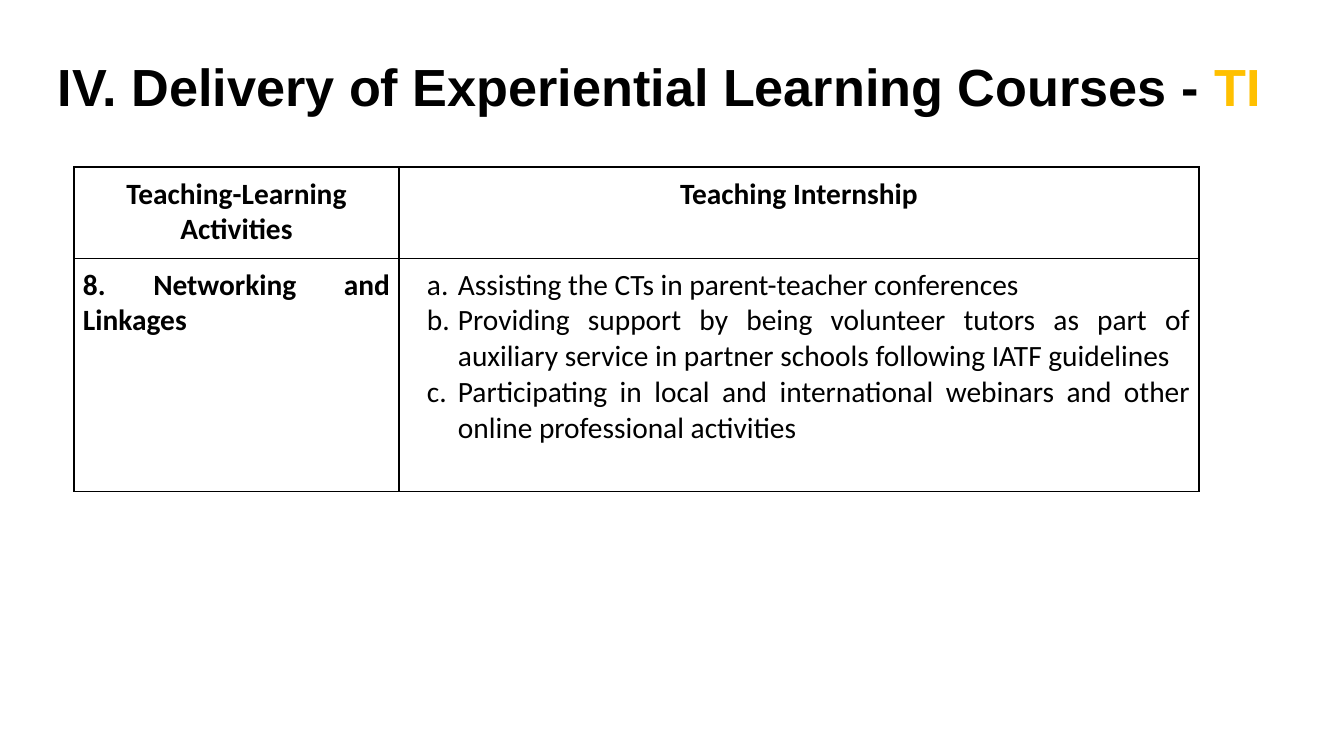
from lxml import etree
from pptx import Presentation
from pptx.dml.color import RGBColor
from pptx.enum.text import MSO_ANCHOR, PP_ALIGN
from pptx.oxml.ns import qn
from pptx.util import Pt

PX = 914400 / 100.8
CENTER, JUSTIFY = PP_ALIGN.CENTER, PP_ALIGN.JUSTIFY
BOTTOM = MSO_ANCHOR.BOTTOM
BLACK, GOLD = "000000", "FFC000"


def px(n):
    return round(n * PX)


def style(run, font, size, bold, color):
    run.font.name = font
    run.font.size = Pt(size)
    run.font.bold = bold
    run.font.color.rgb = RGBColor.from_string(color)


deck = Presentation()
deck.slide_width, deck.slide_height = px(1344), px(756)
slide = deck.slides.add_slide(deck.slide_layouts[6])

# Title
frame = slide.shapes.add_textbox(px(45), px(38), px(1252), px(90)).text_frame
frame.word_wrap = True
frame.vertical_anchor = BOTTOM
frame.margin_left = frame.margin_right = frame.margin_top = px(13)
frame.margin_bottom = px(11)
title = frame.paragraphs[0]
for text, color in [("IV. Delivery of Experiential Learning Courses - ", BLACK), ("TI", GOLD)]:
    run = title.add_run()
    run.text = text
    style(run, "Arial", 37.3, True, color)

# Table content
rows = [
    ["Teaching-Learning Activities", "Teaching Internship"],
    ["8. Networking and Linkages", "\n".join([
        "Assisting the CTs in parent-teacher conferences",
        "Providing support by being volunteer tutors as part of auxiliary service "
        "in partner schools following IATF guidelines",
        "Participating in local and international webinars and other online "
        "professional activities",
    ])],
]
widths, heights = [325, 800], [91, 233]
table = slide.shapes.add_table(2, 2, px(74), px(167), px(sum(widths)), px(sum(heights))).table
table.first_row = table.horz_banding = False
for col, width in zip(table.columns, widths):
    col.width = px(width)
for row, height in zip(table.rows, heights):
    row.height = px(height)

for r, texts in enumerate(rows):
    for c, text in enumerate(texts):
        cell = table.cell(r, c)
        cell.margin_left = cell.margin_right = px(9)
        cell.margin_top = cell.margin_bottom = px(9)
        cell.text_frame.text = text
        listed = r == 1 and c == 1
        for para in cell.text_frame.paragraphs:
            para.alignment = JUSTIFY if r else CENTER
            style(para.runs[0], "Calibri", 21, not listed, BLACK)
            # Lettered list
            if listed:
                props = para._p.get_or_add_pPr()
                props.set("marL", str(px(50)))
                props.set("indent", str(px(-31)))
                etree.SubElement(props, qn("a:buFont"), typeface="Calibri")
                etree.SubElement(props, qn("a:buAutoNum"), type="alphaLcPeriod")

        # Borders, then no fill
        props = cell._tc.get_or_add_tcPr()
        for side in "LRTB":
            thick = 1 if side in "LR" or (side == "T" and r == 0) else 0.75
            line = etree.SubElement(props, qn("a:ln" + side), w=str(Pt(thick)))
            fill = etree.SubElement(line, qn("a:solidFill"))
            etree.SubElement(fill, qn("a:srgbClr"), val=BLACK)
        cell.fill.background()

deck.save("out.pptx")
